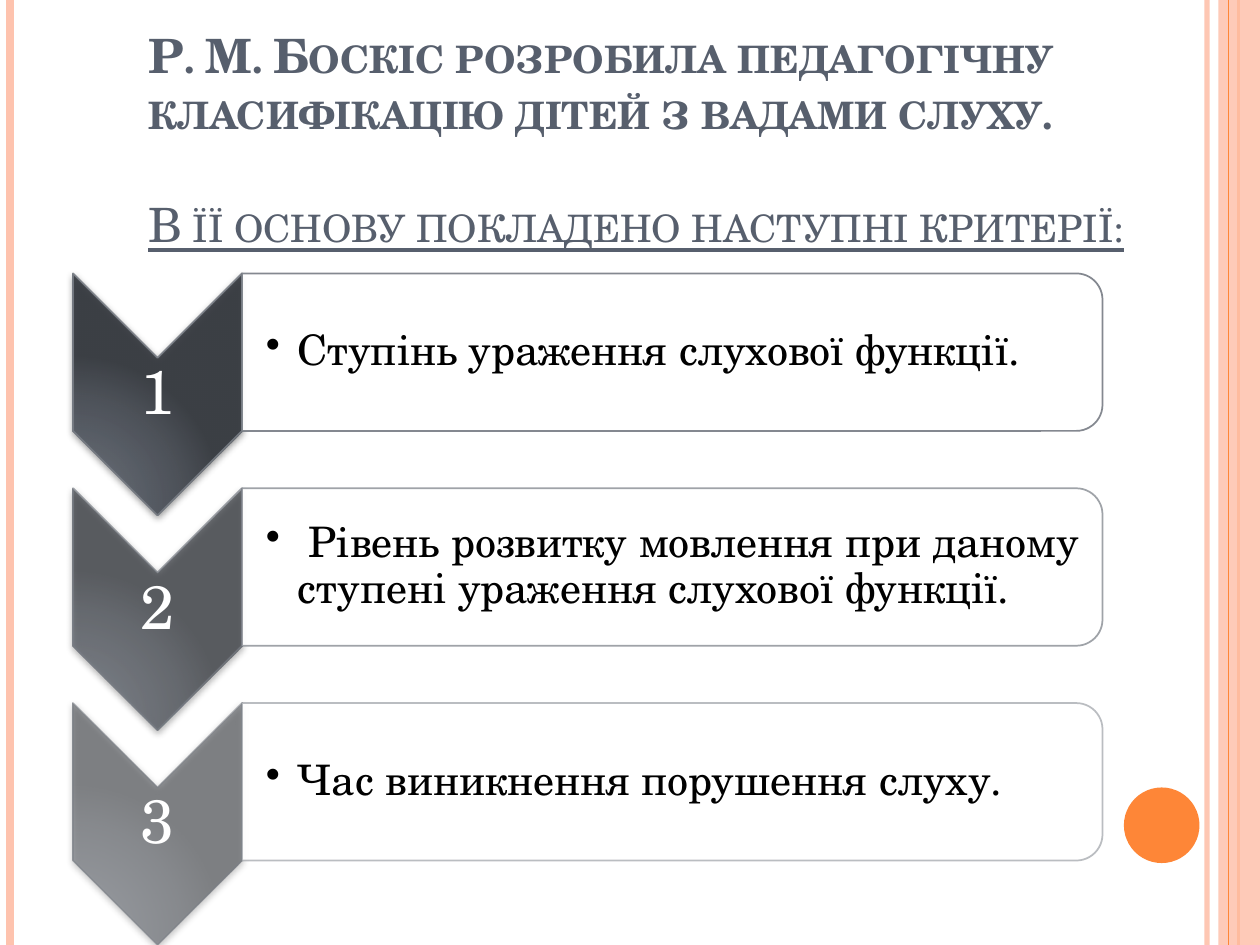
import pptx
import pptx.util
import pptx.dml.color
import pptx.oxml
import pptx.oxml.ns
import pptx.enum.shapes
import pptx.enum.text

WIDTH, HEIGHT = 10, 7.5
FONT = "TeX Gyre Schola"
INK, EDGE, ORANGE, PEACH = "575F6D", "777C84", "FE8637", "FEC3AE"

TITLE = [
    ("Р. М. Боскіс розробила педагогічну класифікацію дітей з вадами слуху.", True, False),
    ("В її основу покладено наступні критерії:", False, True),
]
CRITERIA = [
    ("1", "Ступінь ураження слухової функції.", 90),
    ("2", " Рівень розвитку мовлення при даному ступені ураження слухової функції.", 70),
    ("3", "Час виникнення порушення слуху.", 50),
]
STRIPES = [(9.58, PEACH, 3, 93), (0.08, PEACH, 4.5, 100), (9.83, ORANGE, 1.5, 100)]
THIN_STRIPE = (9.75, ORANGE, 0.75, 100)
GRADIENT = [(0, "5E656F"), (30, "5B616B"), (75, "444951"), (100, "32363C")]

LEFT, TOP, PITCH = 0.58, 2.17, 1.705
CHEVRON_WIDTH, CHEVRON_HEIGHT = 1.34, 1.92
PANEL_WIDTH, PANEL_HEIGHT = 6.83, 1.25
PANEL_LEFT = LEFT + CHEVRON_WIDTH
NAMESPACE = pptx.oxml.ns.nsdecls("a")
SHAPES = pptx.enum.shapes.MSO_SHAPE
ANCHORS = pptx.enum.text.MSO_ANCHOR

presentation = pptx.Presentation()
presentation.slide_width = pptx.util.Inches(WIDTH)
presentation.slide_height = pptx.util.Inches(HEIGHT)
slide = presentation.slides.add_slide(presentation.slide_layouts[6])


def inches(*lengths):
    return [pptx.util.Inches(length) for length in lengths]


def color(value):
    return pptx.dml.color.RGBColor.from_string(value)


def fade(shape, tag, alpha):
    if alpha < 100:
        part = shape._element.spPr.find(pptx.oxml.ns.qn(tag))
        for node in part.iter(pptx.oxml.ns.qn("a:srgbClr")):
            node.append(pptx.oxml.parse_xml(f'<a:alpha {NAMESPACE} val="{alpha * 1000}"/>'))


def set_line(shape, value, width, alpha=100):
    shape.line.color.rgb = color(value)
    shape.line.width = pptx.util.Pt(width)
    fade(shape, "a:ln", alpha)


def add_stripe(x, value, width, alpha):
    stripe = slide.shapes.add_connector(
        pptx.enum.shapes.MSO_CONNECTOR.STRAIGHT, *inches(x, 0, x, HEIGHT))
    set_line(stripe, value, width, alpha)
    stripe._element.spPr.append(pptx.oxml.parse_xml(f"<a:effectLst {NAMESPACE}/>"))


def add_shape(kind, left, top, width, height, fill=None, alpha=100):
    shape = slide.shapes.add_shape(kind, *inches(left, top, width, height))
    shape.shadow.inherit = False
    shape.line.fill.background()
    if fill:
        shape.fill.solid()
        shape.fill.fore_color.rgb = color(fill)
        fade(shape, "a:solidFill", alpha)
    return shape


def add_turned(kind, left, top, width, height, fill=None, alpha=100):
    shift = (width - height) / 2
    shape = add_shape(kind, left + shift, top - shift, height, width, fill, alpha)
    shape.rotation = 90
    return shape


def add_text(left, top, width, height, anchor, insets):
    box = slide.shapes.add_textbox(*inches(left, top, width, height))
    frame = box.text_frame
    frame.word_wrap = True
    frame.vertical_anchor = anchor
    (frame.margin_left, frame.margin_top,
     frame.margin_right, frame.margin_bottom) = inches(*insets)
    return frame


def add_run(paragraph, text, size, value):
    run = paragraph.add_run()
    run.text = text
    run.font.name = FONT
    run.font.size = pptx.util.Pt(size)
    run.font.color.rgb = color(value)
    return run


def add_chevron(top, alpha):
    chevron = add_turned(SHAPES.CHEVRON, LEFT, top, CHEVRON_WIDTH, CHEVRON_HEIGHT)
    stops = "".join(
        f'<a:gs pos="{place * 1000}"><a:srgbClr val="{value}">'
        f'<a:alpha val="{alpha * 1000}"/></a:srgbClr></a:gs>'
        for place, value in GRADIENT)
    properties = chevron._element.spPr
    properties.insert(2, pptx.oxml.parse_xml(
        f'<a:gradFill {NAMESPACE} rotWithShape="1"><a:gsLst>{stops}</a:gsLst>'
        '<a:path path="circle"><a:fillToRect l="5000" t="100000" r="120000" b="10000"/>'
        '</a:path></a:gradFill>'))
    set_line(chevron, EDGE, 1, alpha)
    properties.find(pptx.oxml.ns.qn("a:effectLst")).append(pptx.oxml.parse_xml(
        f'<a:outerShdw {NAMESPACE} blurRad="50800" dist="20320" dir="5400000" '
        'rotWithShape="0"><a:srgbClr val="000000"><a:alpha val="42000"/></a:srgbClr>'
        '</a:outerShdw>'))


def add_criterion(top, number, text, alpha):
    add_chevron(top, alpha)
    frame = add_text(LEFT, top + CHEVRON_WIDTH / 2, CHEVRON_WIDTH,
                     CHEVRON_HEIGHT - CHEVRON_WIDTH, ANCHORS.MIDDLE, [0.02] * 4)
    paragraph = frame.paragraphs[0]
    paragraph.alignment = pptx.enum.text.PP_ALIGN.CENTER
    paragraph.line_spacing = 0.9
    add_run(paragraph, number, 35, "FFFFFF")

    panel = add_turned(SHAPES.ROUND_2_SAME_RECTANGLE, PANEL_LEFT, top,
                       PANEL_WIDTH, PANEL_HEIGHT, "FFFFFF", 90)
    set_line(panel, EDGE, 1, alpha)
    frame = add_text(PANEL_LEFT, top + 0.06, PANEL_WIDTH - 0.06, PANEL_HEIGHT - 0.12,
                     ANCHORS.MIDDLE, [0.19, 0.02, 0.02, 0.02])
    paragraph = frame.paragraphs[0]
    paragraph.line_spacing = 0.9
    properties = paragraph._p.get_or_add_pPr()
    indent = pptx.util.Inches(0.25)
    properties.set("marL", str(indent))
    properties.set("indent", str(-indent))
    properties.append(pptx.oxml.parse_xml(f'<a:buChar {NAMESPACE} char="•"/>'))
    add_run(paragraph, text, 24, "000000")


for stripe in STRIPES:
    add_stripe(*stripe)
add_shape(SHAPES.RECTANGLE, 9.67, 0, 0.33, HEIGHT, PEACH, 87)
add_stripe(*THIN_STRIPE)
add_shape(SHAPES.OVAL, 8.92, 6.25, 0.6, 0.6, ORANGE)

title = add_text(1.08, 1.25, 8.17, 1.25, ANCHORS.BOTTOM, [0.1, 0.05, 0.1, 0.5])
for index, (text, bold, underline) in enumerate(TITLE):
    paragraph = title.add_paragraph() if index else title.paragraphs[0]
    paragraph.space_before = pptx.util.Pt(32 * index)
    run = add_run(paragraph, text, 27, INK)
    run.font.bold = bold
    run.font.underline = underline
    run._r.get_or_add_rPr().set("cap", "small")

for row, (number, text, alpha) in enumerate(CRITERIA):
    add_criterion(TOP + row * PITCH, number, text, alpha)

presentation.save("out.pptx")
